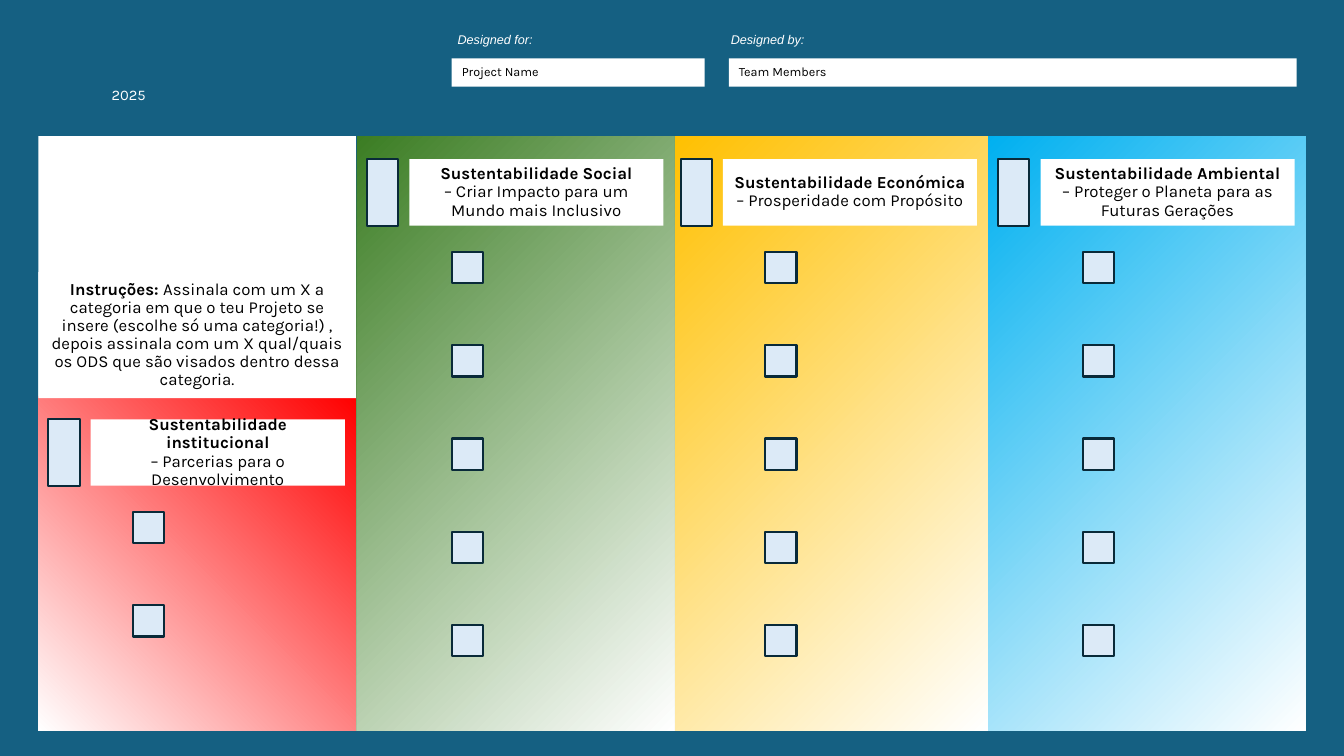
from pptx import Presentation
from pptx.dml.color import RGBColor
from pptx.enum.shapes import MSO_SHAPE as Shape
from pptx.enum.text import MSO_ANCHOR as Anchor, MSO_AUTO_SIZE as AutoSize, PP_ALIGN as Align
from pptx.util import Inches, Pt

COLORS = {
    "background": "156082", "white": "FFFFFF", "black": "000000",
    "check": "DCEAF7", "outline": "092A39",
    "social": "3B7D23", "economic": "FFC000",
    "environment": "00B0F0", "institution": "FF0000",
}

PANELS = [
    ("economic", 6.65, 1.35, 5.9, 315, 5,
     "Sustentabilidade Económica", "– Prosperidade com Propósito"),
    ("environment", 9.8, 1.35, 5.9, 315, 5,
     "Sustentabilidade Ambiental", "– Proteger o Planeta para as Futuras Gerações"),
    ("social", 3.54, 1.35, 5.9, 315, 5,
     "Sustentabilidade Social", "– Criar Impacto para um Mundo mais Inclusivo"),
    ("institution", 0.38, 3.93, 3.32, 225, 2,
     "Sustentabilidade institucional", "– Parcerias para o Desenvolvimento"),
]
PANEL_WIDTH = 3.15
CHECK_SIZE = 0.31
CHECK_STEP = 0.925
HEADER_HEIGHT = 0.66

INSTRUCTIONS = (
    "Assinala com um X a categoria em que o teu Projeto se insere "
    "(escolhe só uma categoria!) , depois assinala com um X qual/quais os ODS "
    "que são visados dentro dessa categoria."
)


def color(name):
    """Return the named colour."""
    return RGBColor.from_string(COLORS[name])


class CanvasSlide:
    """Style and elements of the sustainability canvas."""

    def __init__(self, presentation):
        """Add a title-only slide with the canvas background."""
        self.slide = presentation.slides.add_slide(presentation.slide_layouts[5])
        fill = self.slide.background.fill
        fill.solid()
        fill.fore_color.rgb = color("background")

    def set_text(self, shape, paragraphs, ink="black", align=Align.LEFT,
                 anchor=Anchor.MIDDLE, spacing=0.9, **font_format):
        """Fill a shape with paragraphs given as lists of (text, bold) runs."""
        frame = shape.text_frame
        frame_format = {"word_wrap": True, "auto_size": AutoSize.NONE,
                        "vertical_anchor": anchor}
        for name, value in frame_format.items():
            setattr(frame, name, value)
        font_format = {"name": "Karla", "size": Pt(12), **font_format}
        for index, runs in enumerate(paragraphs):
            paragraph = frame.add_paragraph() if index else frame.paragraphs[0]
            paragraph.alignment = align
            paragraph.line_spacing = spacing
            for text, bold in runs:
                run = paragraph.add_run()
                run.text = text
                for name, value in {**font_format, "bold": bold}.items():
                    setattr(run.font, name, value)
                run.font.color.rgb = color(ink)

    def box(self, left, top, width, height, fill="white"):
        """Add a plain rectangle."""
        shape = self.slide.shapes.add_shape(
            Shape.RECTANGLE, Inches(left), Inches(top), Inches(width), Inches(height))
        shape.shadow.inherit = False
        shape.fill.solid()
        shape.fill.fore_color.rgb = color(fill)
        shape.line.fill.background()
        return shape

    def check(self, left, top, height=CHECK_SIZE):
        """Add an outlined box to be marked."""
        shape = self.box(left, top, CHECK_SIZE, height, "check")
        shape.line.color.rgb = color("outline")
        shape.line.width = Pt(1.5)

    def label(self, left, top, width, height, text, **font_format):
        """Add a white caption."""
        shape = self.slide.shapes.add_textbox(
            Inches(left), Inches(top), Inches(width), Inches(height))
        self.set_text(shape, [[(text, False)]], "white", anchor=Anchor.TOP,
                      spacing=1.0, **font_format)

    def project_title(self, left, top, width, height, text):
        """Place the project name in the title placeholder."""
        title = self.slide.shapes.title
        bounds = {"left": left, "top": top, "width": width, "height": height}
        for name, value in bounds.items():
            setattr(title, name, Inches(value))
        title.fill.solid()
        title.fill.fore_color.rgb = color("white")
        self.set_text(title, [[(text, False)]], size=Pt(9))

    def panel(self, hue, left, top, height, angle, checks, heading, subtitle):
        """Add a gradient panel with its heading and check boxes."""
        shape = self.box(left, top, PANEL_WIDTH, height)
        shape.fill.gradient()
        shape.fill.gradient_angle = angle
        for stop, name in zip(shape.fill.gradient_stops, (hue, "white")):
            stop.color.rgb = color(name)
        header = self.box(left + 0.52, top + 0.23, 2.52, HEADER_HEIGHT)
        self.set_text(header, [[(heading, True)], [(subtitle, False)]],
                      align=Align.CENTER)
        self.check(left + 0.1, top + 0.23, HEADER_HEIGHT)
        for row in range(checks):
            self.check(left + 0.94, top + 1.15 + row * CHECK_STEP)


def main():
    """Build and save the canvas."""
    presentation = Presentation()
    presentation.slide_width = Inches(13.33)
    presentation.slide_height = Inches(7.5)
    canvas = CanvasSlide(presentation)

    canvas.project_title(4.48, 0.58, 2.51, 0.28, "Project Name")
    members = canvas.box(7.23, 0.58, 5.63, 0.28)
    canvas.set_text(members, [[("Team Members", False)]], size=Pt(9))
    caption = {"name": "Arial", "size": Pt(9), "italic": True}
    canvas.label(4.44, 0.27, 2.21, 0.25, "Designed for:", **caption)
    canvas.label(7.15, 0.27, 1.53, 0.25, "Designed by:", **caption)
    canvas.label(1.01, 0.8, 0.64, 0.29, "2025", size=Pt(10.5))

    for panel in PANELS:
        canvas.panel(*panel)

    canvas.box(0.38, 1.35, PANEL_WIDTH, 2.58)
    instructions = canvas.box(0.38, 2.7, PANEL_WIDTH, 1.25)
    canvas.set_text(instructions, [[("Instruções: ", True), (INSTRUCTIONS, False)]],
                    align=Align.CENTER)

    presentation.save("out.pptx")


if __name__ == "__main__":
    main()
